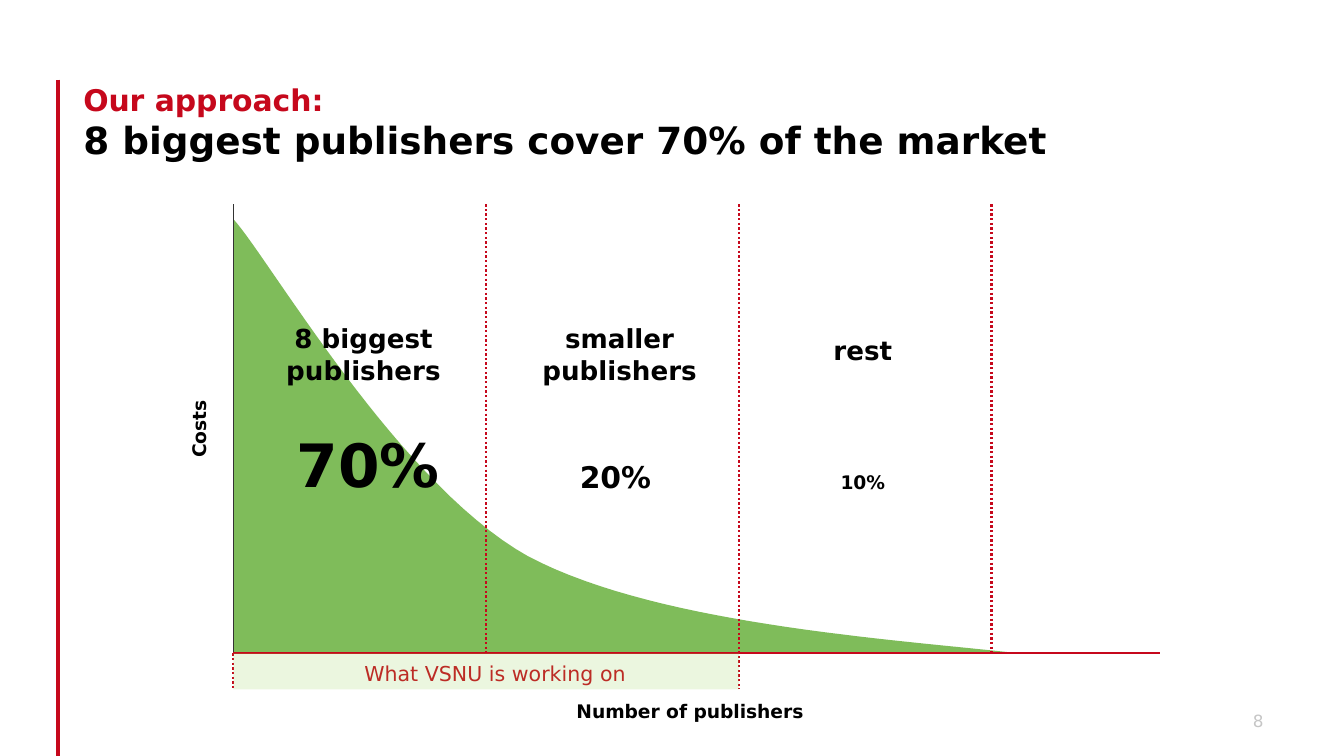
"""Build the slide on how publishers share the market costs."""
from lxml.etree import SubElement
from pptx import Presentation
from pptx.dml.color import RGBColor
from pptx.enum.dml import MSO_LINE
from pptx.enum.shapes import MSO_CONNECTOR, MSO_SHAPE
from pptx.enum.text import MSO_ANCHOR, PP_ALIGN
from pptx.oxml.ns import qn
from pptx.util import Pt

FONT = "DejaVu Sans"
RED, BLACK, GREY = "C6081C", "000000", "C6C6C6"
GREEN, LIME, DARK = "7FBC5A", "92D050", "333333"

TITLE = [("Our approach:", 16, RED), ("8 biggest publishers cover 70% of the market", 20, BLACK)]
GROUP_LABELS = [
    ("8 biggest publishers", (143.3, 172.8, 94.3, 37.4)),
    ("smaller\npublishers", (275.8, 172.8, 103.7, 43.2)),
    ("rest", (406.1, 179.3, 103.7, 20.2)),
]
SHARES = [
    ("70%", 32, (139, 229, 108, 40.3)),
    ("20%", 16, (271.4, 245.5, 108, 40.3)),
    ("10%", 10, (403.9, 252, 108, 40.3)),
]
AXIS_LABELS = [("Costs", (79.9, 220.3, 54, 13), -90), ("Number of publishers", (300.2, 375.1, 134, 14.4), 0)]
LEFT, TOP, BASE, BAND_BOTTOM = 125, 109.4, 350, 369.4
GROUP_WIDTH = 135.4
CURVE = [
    ((125, 117.4), (144, 138.2), (213.1, 259.2), (283, 298.1)),
    ((283, 298.1), (351.4, 334.1), (472.3, 342), (545.8, BASE)),
]
CURVE_STEPS = 30


def color(value):
    return RGBColor.from_string(value)


def add_text(slide, text, place, size=14, ink=BLACK, bold=True, align=PP_ALIGN.LEFT,
             anchor=MSO_ANCHOR.TOP, insets=(8.64, 0, 0, 3.6), rotation=0):
    box = slide.shapes.add_textbox(*map(Pt, place))
    box.rotation = rotation
    frame = box.text_frame
    frame.word_wrap = True
    frame.vertical_anchor = anchor
    frame.margin_left, frame.margin_top, frame.margin_right, frame.margin_bottom = map(Pt, insets)
    lines = [(line, size, ink) for line in text.split("\n")] if isinstance(text, str) else text
    for index, (line, line_size, line_ink) in enumerate(lines):
        paragraph = frame.add_paragraph() if index else frame.paragraphs[0]
        paragraph.alignment = align
        run = paragraph.add_run()
        run.text = line
        run.font.name, run.font.size, run.font.bold = FONT, Pt(line_size), bold
        run.font.color.rgb = color(line_ink)


def add_line(slide, start, end, width, ink=RED, dotted=False):
    line = slide.shapes.add_connector(MSO_CONNECTOR.STRAIGHT, *map(Pt, start + end))
    line.line.color.rgb = color(ink)
    line.line.width = Pt(width)
    if dotted:
        line.line.dash_style = MSO_LINE.ROUND_DOT
    SubElement(line._element.spPr, qn("a:effectLst"))


def fill_plain(shape, ink):
    shape.shadow.inherit = False
    shape.fill.solid()
    shape.fill.fore_color.rgb = color(ink)
    shape.line.fill.background()


def bezier_point(controls, t):
    weights = ((1 - t) ** 3, 3 * t * (1 - t) ** 2, 3 * t ** 2 * (1 - t), t ** 3)
    return tuple(Pt(sum(w * c[axis] for w, c in zip(weights, controls))) for axis in (0, 1))


def add_cost_curve(slide):
    points = [bezier_point(part, step / CURVE_STEPS)
              for part in CURVE for step in range(1, CURVE_STEPS + 1)]
    start_x, start_y = map(Pt, CURVE[0][0])
    builder = slide.shapes.build_freeform(start_x, start_y)
    builder.add_line_segments(points + [(Pt(LEFT), Pt(BASE))], close=True)
    fill_plain(builder.convert_to_shape(), GREEN)


def add_band(slide):
    band = slide.shapes.add_shape(
        MSO_SHAPE.RECTANGLE, Pt(LEFT), Pt(BASE), Pt(2 * GROUP_WIDTH), Pt(BAND_BOTTOM - BASE))
    fill_plain(band, LIME)
    fill_color = band._element.spPr.find(qn("a:solidFill"))[0]
    SubElement(fill_color, qn("a:alpha")).set("val", "18000")


def main():
    deck = Presentation()
    deck.slide_width, deck.slide_height = Pt(720), Pt(405)
    slide = deck.slides.add_slide(deck.slide_layouts[6])

    add_line(slide, (31.2, 42.7), (31.2, 405), 2)
    add_text(slide, "8", (516.2, 375.1, 167.8, 21.6), size=9, ink=GREY, bold=False,
             align=PP_ALIGN.RIGHT, anchor=MSO_ANCHOR.MIDDLE, insets=(7.2, 3.6, 7.2, 3.6))
    add_text(slide, TITLE, (36, 43.5, 648, 40.3))

    add_cost_curve(slide)
    for label, place, rotation in AXIS_LABELS:
        add_text(slide, label, place, size=10, rotation=rotation)
    for label, place in GROUP_LABELS:
        add_text(slide, label, place, align=PP_ALIGN.CENTER)
    for share, size, place in SHARES:
        add_text(slide, share, place, size=size, align=PP_ALIGN.CENTER)
    add_text(slide, "What VSNU is working on", (186.5, 354.2, 173.5, 18.7),
             size=11, ink=RED, bold=False)

    add_line(slide, (LEFT, TOP), (LEFT, BASE), 0.5, ink=DARK)
    add_line(slide, (621.4, BASE), (LEFT, BASE), 1)
    for group, (top, bottom) in enumerate(
            [(BASE, BAND_BOTTOM), (TOP, BASE), (TOP, BAND_BOTTOM), (TOP, BASE)]):
        x = LEFT + group * GROUP_WIDTH
        add_line(slide, (x, top), (x, bottom), 1.25, dotted=True)
    add_band(slide)
    deck.save("out.pptx")


if __name__ == "__main__":
    main()
